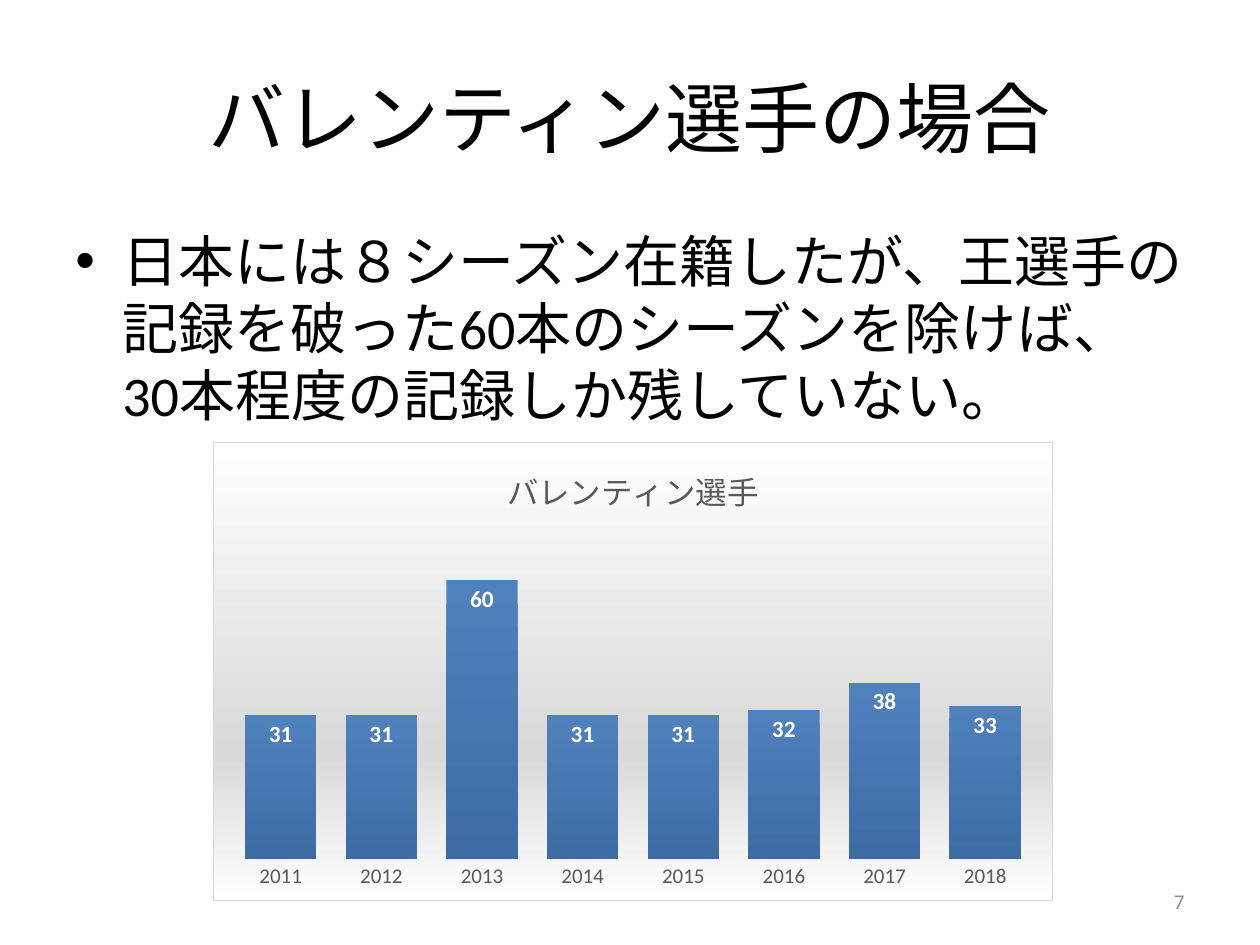
import dataclasses

import pptx
import pptx.chart.data
import pptx.dml.color
import pptx.enum.chart
import pptx.enum.lang
import pptx.enum.text
import pptx.oxml
import pptx.oxml.ns
import pptx.util

PX = 914400 / 126
ALIGN = pptx.enum.text.PP_ALIGN
ANCHOR = pptx.enum.text.MSO_ANCHOR


@dataclasses.dataclass(frozen=True)
class Theme:
    font: str = "Calibri"
    ink: str = "000000"
    muted: str = "595959"
    faint: str = "8C8C8C"
    paper: str = "FFFFFF"
    shade: str = "D9D9D9"
    bar_top: str = "4F81BD"
    bar_base: str = "3D6CA4"
    title_size: float = 44
    body_size: float = 32
    chart_title_size: float = 18
    label_size: float = 13.3
    small_size: float = 12


def px(length):
    return pptx.util.Emu(round(length * PX))


def rgb(color):
    return pptx.dml.color.RGBColor.from_string(color)


def set_font(font, size, color, bold=False):
    font.name = Theme.font
    font.size = pptx.util.Pt(size)
    font.bold = bold
    font.color.rgb = rgb(color)


def write(paragraph, text, *, size, color=Theme.ink, align=ALIGN.LEFT):
    run = paragraph.add_run()
    run.text = text
    set_font(run.font, size, color)
    run.font.language_id = pptx.enum.lang.MSO_LANGUAGE_ID.JAPANESE
    paragraph.alignment = align


class SlideBuilder:
    def __init__(self, theme, slide):
        self.theme = theme
        self.slide = slide

    def text(self, box, words, *, anchor=ANCHOR.MIDDLE, **style):
        frame = self.slide.shapes.add_textbox(*map(px, box)).text_frame
        frame.word_wrap = True
        frame.vertical_anchor = anchor
        paragraph = frame.paragraphs[0]
        write(paragraph, words, **style)
        return paragraph

    def bullet(self, box, words, *, indent, **style):
        paragraph = self.text(box, words, anchor=ANCHOR.TOP, **style)
        paragraph.space_before = pptx.util.Pt(0.2 * style["size"])
        properties = paragraph._p.get_or_add_pPr()
        properties.set("marL", str(px(indent)))
        properties.set("indent", str(-px(indent)))
        ns = pptx.oxml.ns.nsdecls("a")
        properties.append(pptx.oxml.parse_xml(f'<a:buFont {ns} typeface="Arial"/>'))
        properties.append(pptx.oxml.parse_xml(f'<a:buChar {ns} char="•"/>'))

    def column_chart(self, box, title, categories, values, *, maximum, gap):
        theme = self.theme
        data = pptx.chart.data.CategoryChartData()
        data.categories = categories
        data.add_series(title, values)
        kind = pptx.enum.chart.XL_CHART_TYPE.COLUMN_CLUSTERED
        chart = self.slide.shapes.add_chart(kind, *map(px, box), data).chart
        set_font(chart.font, theme.small_size, theme.muted)
        chart.has_legend = False
        chart.has_title = True
        write(chart.chart_title.text_frame.paragraphs[0], title,
              size=theme.chart_title_size, color=theme.muted, align=ALIGN.CENTER)
        chart.chart_title.include_in_layout = False

        years = chart.category_axis
        years.major_tick_mark = pptx.enum.chart.XL_TICK_MARK.NONE
        years.format.line.fill.background()
        set_font(years.tick_labels.font, theme.small_size, theme.muted)
        scale = chart.value_axis
        scale.minimum_scale, scale.maximum_scale = 0, maximum
        scale.has_major_gridlines = False
        scale.visible = False

        plot = chart.plots[0]
        plot.gap_width = gap
        plot.vary_by_categories = False
        fill = plot.series[0].format.fill
        fill.gradient()
        fill.gradient_angle = 270
        for stop, color, position in zip(
                fill.gradient_stops, (theme.bar_top, theme.bar_base), (0, 1)):
            stop.color.rgb = rgb(color)
            stop.position = position
        plot.has_data_labels = True
        labels = plot.data_labels
        labels.show_value = True
        labels.position = pptx.enum.chart.XL_LABEL_POSITION.INSIDE_END
        set_font(labels.font, theme.label_size, theme.paper, bold=True)
        self.chart_area(chart)
        self.plot_area(chart, x=0.02, y=0.2, w=0.96, h=0.71)

    def chart_area(self, chart):
        theme = self.theme
        stops = "".join(
            f'<a:gs pos="{percent * 1000}"><a:srgbClr val="{color}"/></a:gs>'
            for percent, color in ((0, theme.paper), (68, theme.shade), (100, theme.paper)))
        area = pptx.oxml.parse_xml(
            f'<c:spPr {pptx.oxml.ns.nsdecls("c", "a")}>'
            f'<a:gradFill><a:gsLst>{stops}</a:gsLst><a:lin ang="5400000" scaled="0"/></a:gradFill>'
            f'<a:ln w="{pptx.util.Pt(0.75)}"><a:solidFill><a:srgbClr val="{theme.shade}"/>'
            '</a:solidFill></a:ln></c:spPr>')
        chart._chartSpace.find(pptx.oxml.ns.qn("c:chart")).addnext(area)

    def plot_area(self, chart, **fractions):
        sizes = "".join(f'<c:{key} val="{value}"/>' for key, value in fractions.items())
        layout = pptx.oxml.parse_xml(
            f'<c:layout {pptx.oxml.ns.nsdecls("c")}><c:manualLayout>'
            '<c:layoutTarget val="inner"/><c:xMode val="edge"/><c:yMode val="edge"/>'
            f'{sizes}</c:manualLayout></c:layout>')
        plot_area = chart._chartSpace.chart.plotArea
        for automatic in plot_area.findall(pptx.oxml.ns.qn("c:layout")):
            plot_area.remove(automatic)
        plot_area.insert(0, layout)


def main():
    theme = Theme()
    deck = pptx.Presentation()
    deck.slide_width, deck.slide_height = px(1260), px(945)
    page = SlideBuilder(theme, deck.slides.add_slide(deck.slide_layouts[6]))

    page.text((63, 38, 1134, 158), "バレンティン選手の場合",
              size=theme.title_size, align=ALIGN.CENTER)
    page.bullet((63, 220, 1134, 222),
                "日本には８シーズン在籍したが、王選手の記録を破った60本のシーズンを除けば、"
                "30本程度の記録しか残していない。",
                indent=47, size=theme.body_size)
    page.text((903, 876, 294, 50), "7",
              size=theme.small_size, color=theme.faint, align=ALIGN.RIGHT)
    page.column_chart((213, 442, 840, 459), "バレンティン選手",
                      [str(year) for year in range(2011, 2019)],
                      (31, 31, 60, 31, 31, 32, 38, 33), maximum=70, gap=41)
    deck.save("out.pptx")


if __name__ == "__main__":
    main()
